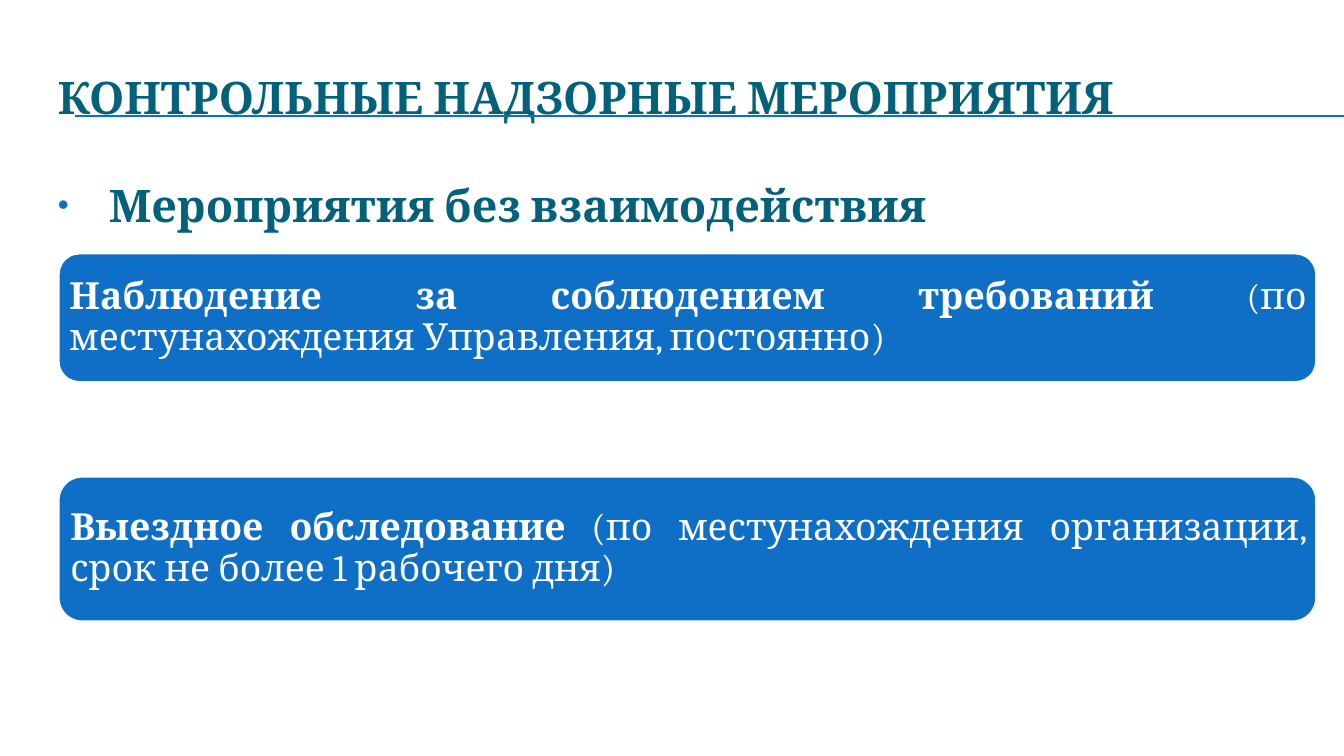
from lxml import etree
from pptx import Presentation
from pptx import util as u
from pptx.dml.color import RGBColor
from pptx.enum import shapes, text
from pptx.oxml import ns

TITLE = "КОНТРОЛЬНЫЕ НАДЗОРНЫЕ МЕРОПРИЯТИЯ"
POINT = "Мероприятия без взаимодействия"
CARDS = [
    (1.88, 0.97, [("Наблюдение за соблюдением требований ", 20, True),
                  ("(", 19, False),
                  ("по местунахождения Управления, постоянно)", 20, False)]),
    (3.54, 1.09, [("Выездное обследование ", 20, True),
                  ("(по местунахождения организации, срок не более 1 рабочего дня)", 20, False)]),
]
RULES = [62.2, 62.4]
BLUE, TEAL, WHITE = "0F6FC6", "04617B", "FFFFFF"


def paint(target, color):
    if hasattr(target, "solid"):
        target.solid()
        target = target.fore_color
    else:
        target = target.color
    target.rgb = RGBColor.from_string(color)


def style(font, size, color, bold):
    font.name, font.size, font.bold = "Cambria", u.Pt(size), bold
    paint(font, color)


def place(shape, *box):
    shape.left, shape.top, shape.width, shape.height = map(u.Inches, box)


def head(shape, words, anchor, *box):
    place(shape, *box)
    frame = shape.text_frame
    frame.text = words
    frame.auto_size = text.MSO_AUTO_SIZE.NONE
    frame.vertical_anchor = anchor
    para = frame.paragraphs[0]
    para.alignment = text.PP_ALIGN.LEFT
    style(para.font, 24, TEAL, True)
    return para


def bullet(para, color, size, indent):
    props = para._p.get_or_add_pPr()
    props.set("marL", str(u.Inches(indent)))
    props.set("indent", str(-u.Inches(indent)))
    tint = etree.Element(ns.qn("a:buClr"))
    etree.SubElement(tint, ns.qn("a:srgbClr"), val=color)
    scale = etree.Element(ns.qn("a:buSzPct"), val=str(size * 1000))
    mark = etree.Element(ns.qn("a:buChar"), char="•")
    spot = props.find(ns.qn("a:defRPr"))
    for item in (tint, scale, mark):
        spot.addprevious(item)


def rule(slide, top):
    line = slide.shapes.add_connector(
        shapes.MSO_CONNECTOR.STRAIGHT,
        u.Inches(0.56), u.Pt(top), u.Inches(10), u.Pt(top))
    paint(line.line, BLUE)
    line.line.width = u.Pt(0.75)
    etree.SubElement(line._element.spPr, ns.qn("a:effectLst"))


def card(slide, top, height, runs):
    shape = slide.shapes.add_shape(
        shapes.MSO_SHAPE.ROUNDED_RECTANGLE,
        *map(u.Inches, (0.43, top, 9.37, height)))
    shape.shadow.inherit = False
    paint(shape.fill, BLUE)
    paint(shape.line, WHITE)
    shape.line.width = u.Pt(2)
    frame = shape.text_frame
    frame.word_wrap = True
    frame.vertical_anchor = text.MSO_ANCHOR.MIDDLE
    frame.margin_left = u.Inches(0.04)
    frame.margin_right = frame.margin_top = frame.margin_bottom = u.Inches(0.03)
    para = frame.paragraphs[0]
    para.alignment = text.PP_ALIGN.JUSTIFY
    para.line_spacing = 0.9
    para.space_after = u.Pt(7)
    for words, size, bold in runs:
        run = para.add_run()
        run.text = words
        style(run.font, size, WHITE, bold)


def main():
    deck = Presentation()
    deck.slide_width, deck.slide_height = u.Inches(10), u.Pt(405)
    slide = deck.slides.add_slide(deck.slide_layouts[1])
    for top in RULES:
        rule(slide, top)
    title, body = slide.placeholders
    head(title, TITLE, text.MSO_ANCHOR.MIDDLE, 0.33, 0.37, 9.5, 0.69)
    para = head(body, POINT, text.MSO_ANCHOR.TOP, 0.33, 1.27, 9.5, 3.71)
    para.space_before = u.Pt(4.8)
    bullet(para, BLUE, 70, 0.38)
    for top, height, runs in CARDS:
        card(slide, top, height, runs)
    deck.save("out.pptx")


if __name__ == "__main__":
    main()
